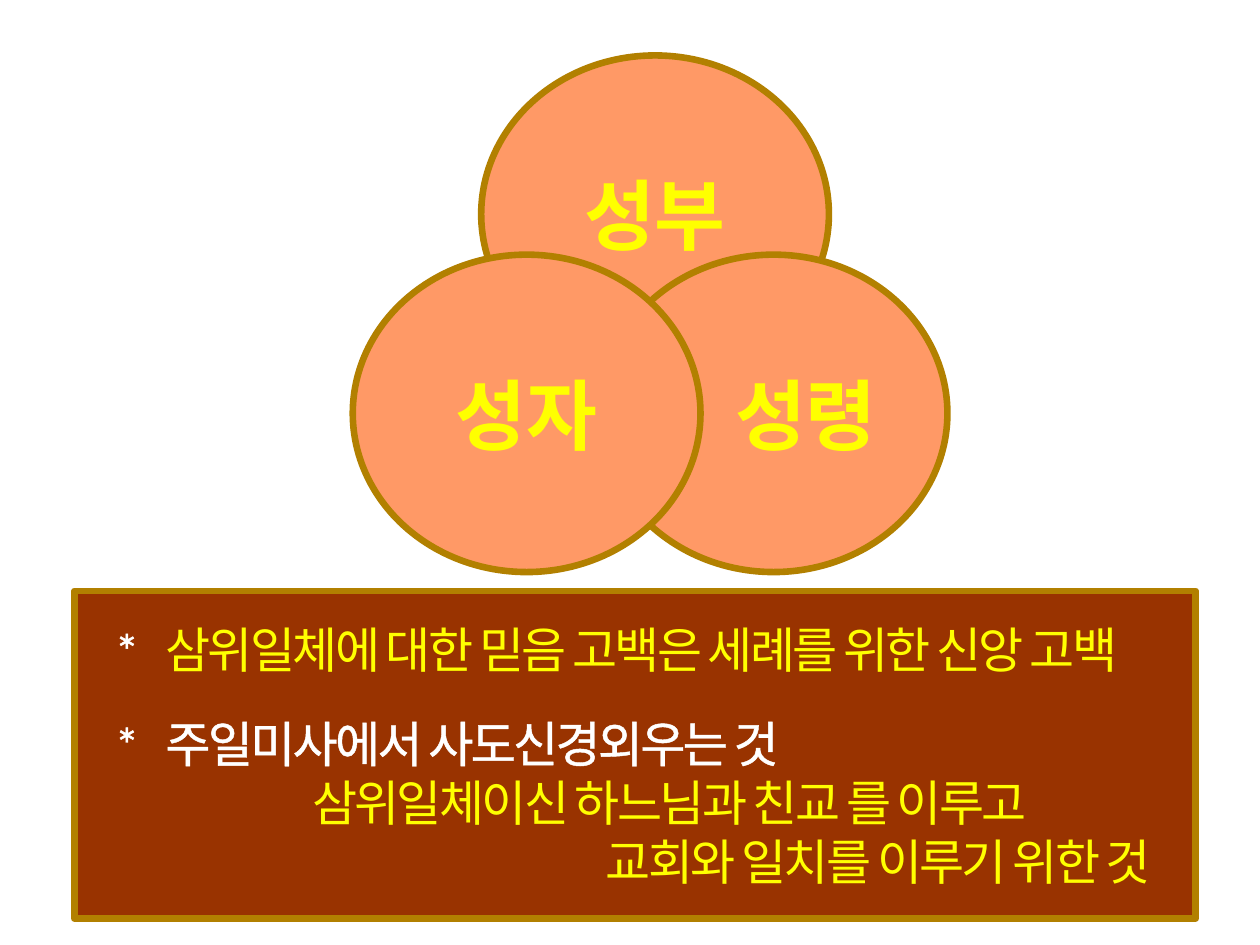
from dataclasses import dataclass

from lxml import etree
from pptx import Presentation
from pptx.dml.color import RGBColor
from pptx.enum.shapes import MSO_SHAPE
from pptx.enum.text import MSO_ANCHOR, PP_ALIGN
from pptx.oxml import parse_xml
from pptx.oxml.ns import nsdecls
from pptx.util import Pt

OVAL, RECTANGLE = MSO_SHAPE.OVAL, MSO_SHAPE.RECTANGLE
LEFT, CENTER = PP_ALIGN.LEFT, PP_ALIGN.CENTER
MIDDLE = MSO_ANCHOR.MIDDLE


@dataclass(frozen=True)
class Theme:
    font: str = "Calibri"
    circle: str = "FF9966"
    panel: str = "993300"
    border: str = "B28000"
    yellow: str = "FFFF00"
    white: str = "FFFFFF"
    border_width: float = 3.78
    label_size: int = 44
    body_size: int = 28


THEME = Theme()


def add_block(slide, kind, box, fill):
    shape = slide.shapes.add_shape(kind, *(Pt(length) for length in box))
    shape.shadow.inherit = False
    shape.fill.solid()
    shape.fill.fore_color.rgb = RGBColor.from_string(fill)
    shape.line.color.rgb = RGBColor.from_string(THEME.border)
    shape.line.width = Pt(THEME.border_width)
    shape.text_frame.word_wrap = True
    shape.text_frame.vertical_anchor = MIDDLE
    return shape


def format_paragraph(paragraph, align=CENTER, margin=0, hanging=0, space_before=0):
    paragraph.alignment = align
    properties = paragraph._p.get_or_add_pPr()
    properties.set("marL", str(Pt(margin)))
    properties.set("indent", str(-Pt(hanging)))
    if space_before:
        paragraph.space_before = Pt(space_before)


def add_text(paragraph, text, size, color, outline=None, bold=False, spacing=0):
    """Add a run with an outline and a soft dark shadow."""
    run = paragraph.add_run()
    run.text = text
    font = run.font
    font.size, font.bold = Pt(size), bold
    font.color.rgb = RGBColor.from_string(color)
    properties = run._r.get_or_add_rPr()
    properties.set("spc", str(int(spacing * 100)))
    properties.insert(0, parse_xml(
        f'<a:ln {nsdecls("a")} w="18415" cmpd="sng"><a:solidFill>'
        f'<a:srgbClr val="{outline or color}"/></a:solidFill><a:prstDash val="solid"/></a:ln>'))
    effects = parse_xml(f'<a:effectLst {nsdecls("a")}/>')
    shadow = etree.SubElement(effects, effects.tag.replace("effectLst", "outerShdw"),
                              blurRad="63500", dir="3600000", algn="tl", rotWithShape="0")
    shadow.append(parse_xml(
        f'<a:srgbClr {nsdecls("a")} val="000000"><a:alpha val="70000"/></a:srgbClr>'))
    properties.append(effects)
    font.name = THEME.font


def add_trinity(slide, left, top):
    """Three overlapping circles; the margin clears the covered part of a circle."""
    width, height = 198.7, 181.4
    circles = [("성부", 73.4, 0, 0), ("성령", 141.1, 113.8, 37), ("성자", 0, 113.8, 0)]
    for label, across, down, margin in circles:
        circle = add_block(slide, OVAL, (left + across, top + down, width, height), THEME.circle)
        paragraph = circle.text_frame.paragraphs[0]
        format_paragraph(paragraph, margin=margin)
        add_text(paragraph, label, THEME.label_size, THEME.yellow, bold=True)


def add_creed_panel(slide, box):
    yellow, white = THEME.yellow, THEME.white
    bullet = dict(align=LEFT, margin=45, hanging=29)
    lines = [
        (bullet, [("*\t", white, white),
                  ("삼위일체에 대한 믿음 고백은 세례를 위한 신앙 고백", yellow, white)]),
        (dict(bullet, space_before=20), [("*\t주일미사에서 사도신경외우는 것", white, white)]),
        (dict(margin=39), [("삼위일체이신 하느님과 친교 를 이루고", yellow, yellow)]),
        (dict(margin=278), [("교회와 일치를 이루기 위한 것", yellow, yellow)]),
    ]
    frame = add_block(slide, RECTANGLE, box, THEME.panel).text_frame
    for index, (layout, runs) in enumerate(lines):
        paragraph = frame.add_paragraph() if index else frame.paragraphs[0]
        format_paragraph(paragraph, **layout)
        for text, color, outline in runs:
            add_text(paragraph, text, THEME.body_size, color, outline=outline, spacing=-1.5)


def main():
    presentation = Presentation()
    presentation.slide_width, presentation.slide_height = Pt(720), Pt(540)
    slide = presentation.slides.add_slide(presentation.slide_layouts[6])
    add_trinity(slide, 201.6, 31.7)
    add_creed_panel(slide, (42.5, 337.7, 640.8, 187.2))
    presentation.save("out.pptx")


if __name__ == "__main__":
    main()
